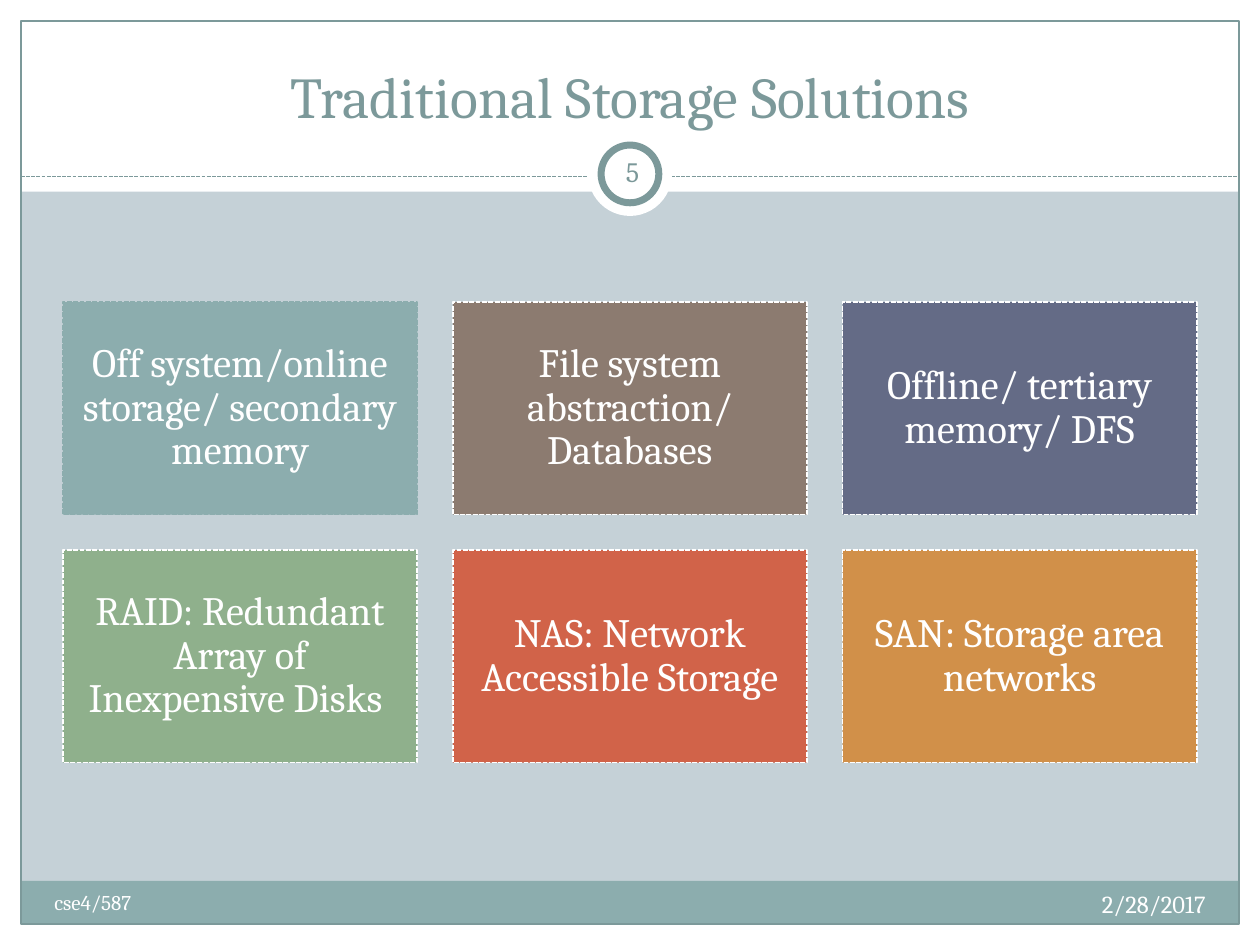
from pptx import Presentation
from pptx.dml.color import RGBColor
from pptx.enum.dml import MSO_LINE
from pptx.enum.shapes import MSO_CONNECTOR, MSO_SHAPE as Shape
from pptx.enum.text import MSO_ANCHOR as Anchor, PP_ALIGN as Align
from pptx.oxml.xmlchemy import OxmlElement
from pptx.util import Pt

# Content
TITLE = "Traditional Storage Solutions"
NUMBER, DATE, COURSE = "5", "2/28/2017", "cse4/587"
SOLUTIONS = [  # text, fill, outline
    ("Off system/online storage/ secondary memory", "teal", "teal"),
    ("File system abstraction/ Databases", "brown", "white"),
    ("Offline/ tertiary memory/ DFS", "indigo", "white"),
    ("RAID: Redundant Array of Inexpensive Disks ", "green", "white"),
    ("NAS: Network Accessible Storage", "red", "white"),
    ("SAN: Storage area networks", "orange", "white"),
]
COLORS = {
    "backdrop": "C5D1D7", "white": "FFFFFF", "teal": "8CADAE",
    "slate": "7C999A", "number": "7B9899", "brown": "8C7B70",
    "indigo": "646B86", "green": "8FB08C", "red": "D16349", "orange": "D19049",
}
FONT = "Cambria"

# Layout, in points
WIDTH, HEIGHT, MARGIN = 720, 540, 12
HEADER_HEIGHT, RULE_Y = 109.5, 100.8
COLUMNS, GRID_LEFT, GRID_TOP = 3, 36, 172.6
CARD_WIDTH, CARD_HEIGHT, GAP = 202.5, 121.5, 20.25
BADGE_X, BADGE_Y = WIDTH / 2, 99.4


def color(name):
    return RGBColor.from_string(COLORS[name])


def set_line(line, name, width, dash=None):
    line.color.rgb = color(name)
    line.width = Pt(width)
    if dash:
        line.dash_style = dash


def add_box(box, fill=None, outline=None, width=0.75, dash=None, kind=Shape.RECTANGLE):
    shape = slide.shapes.add_shape(kind, *map(Pt, box))
    shape.shadow.inherit = False
    if fill:
        shape.fill.solid()
        shape.fill.fore_color.rgb = color(fill)
    else:
        shape.fill.background()
    if outline:
        set_line(shape.line, outline, width, dash)
    else:
        shape.line.fill.background()
    return shape


def add_circle(radius, **style):
    box = (BADGE_X - radius, BADGE_Y - radius, 2 * radius, 2 * radius)
    return add_box(box, kind=Shape.OVAL, **style)


def write(shape, text, size, ink="white", align=Align.CENTER, anchor=Anchor.MIDDLE,
          inset=(7.2, 3.6), spacing=None):
    frame = shape.text_frame
    frame.word_wrap = True
    frame.vertical_anchor = anchor
    frame.margin_left = frame.margin_right = Pt(inset[0])
    frame.margin_top = frame.margin_bottom = Pt(inset[1])
    paragraph = frame.paragraphs[0]
    paragraph.alignment = align
    if spacing:
        paragraph.line_spacing = spacing
    run = paragraph.add_run()
    run.text = text
    run.font.name = FONT
    run.font.size = Pt(size)
    run.font.color.rgb = color(ink)


def add_label(box, text, size, **style):
    write(slide.shapes.add_textbox(*map(Pt, box)), text, size, **style)


deck = Presentation()
deck.slide_width, deck.slide_height = Pt(WIDTH), Pt(HEIGHT)
slide = deck.slides.add_slide(deck.slide_layouts[5])
slide.background.fill.solid()
slide.background.fill.fore_color.rgb = color("backdrop")

# White margins, footer band and frame
inner_width, inner_bottom = WIDTH - 2 * MARGIN, HEIGHT - MARGIN
for box in [(0, inner_bottom, WIDTH, MARGIN), (0, 0, WIDTH, HEADER_HEIGHT),
            (0, 0, MARGIN, HEIGHT), (WIDTH - MARGIN, 0, MARGIN, HEIGHT)]:
    add_box(box, fill="white")
add_box((MARGIN, 503.3, inner_width, inner_bottom - 503.3), fill="teal")
add_box((MARGIN, MARGIN, inner_width, HEIGHT - 2 * MARGIN), outline="slate")

# Dashed rule under the title
rule = slide.shapes.add_connector(
    MSO_CONNECTOR.STRAIGHT, Pt(MARGIN), Pt(RULE_Y), Pt(WIDTH - MARGIN), Pt(RULE_Y))
set_line(rule.line, "slate", 0.75, MSO_LINE.SQUARE_DOT)
rule._element.spPr.append(OxmlElement("a:effectLst"))

# Number badge
add_circle(24, fill="white")
add_circle(16.5, fill="white", outline="slate", width=4)
add_label((343.5, 80.8, 36, 34.4), NUMBER, 16, ink="number", inset=(3.6, 3.6))

# Title, brought in front of the white header
title = slide.shapes.title
title.left, title.top, title.width, title.height = map(Pt, (24, 18, 672, 60))
write(title, TITLE, 33, ink="slate", anchor=Anchor.BOTTOM)
slide.shapes._spTree.append(title._element)

# Storage solution cards
for index, (text, fill, outline) in enumerate(SOLUTIONS):
    row, column = divmod(index, COLUMNS)
    card = add_box((GRID_LEFT + column * (CARD_WIDTH + GAP),
                    GRID_TOP + row * (CARD_HEIGHT + GAP), CARD_WIDTH, CARD_HEIGHT),
                   fill=fill, outline=outline, width=0.9, dash=MSO_LINE.SQUARE_DOT)
    write(card, text, 23, inset=(7.2, 7.2), spacing=0.9)

# Footer
add_label((456, 504.6, 240, 28.8), DATE, 14, align=Align.RIGHT, anchor=Anchor.TOP)
add_label((24, 504.6, 282, 28.8), COURSE, 12, align=Align.LEFT, anchor=Anchor.TOP)

deck.save("out.pptx")
